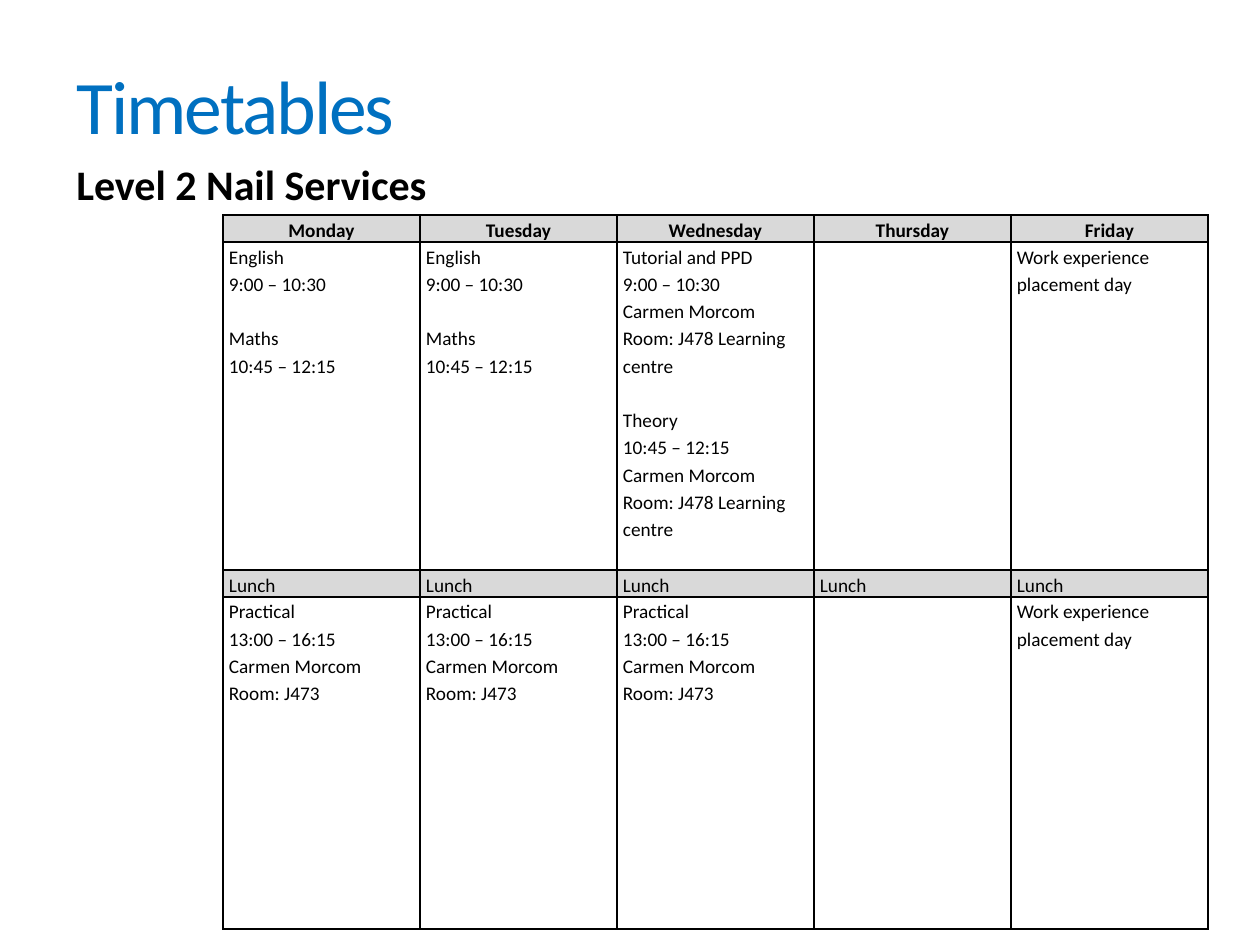
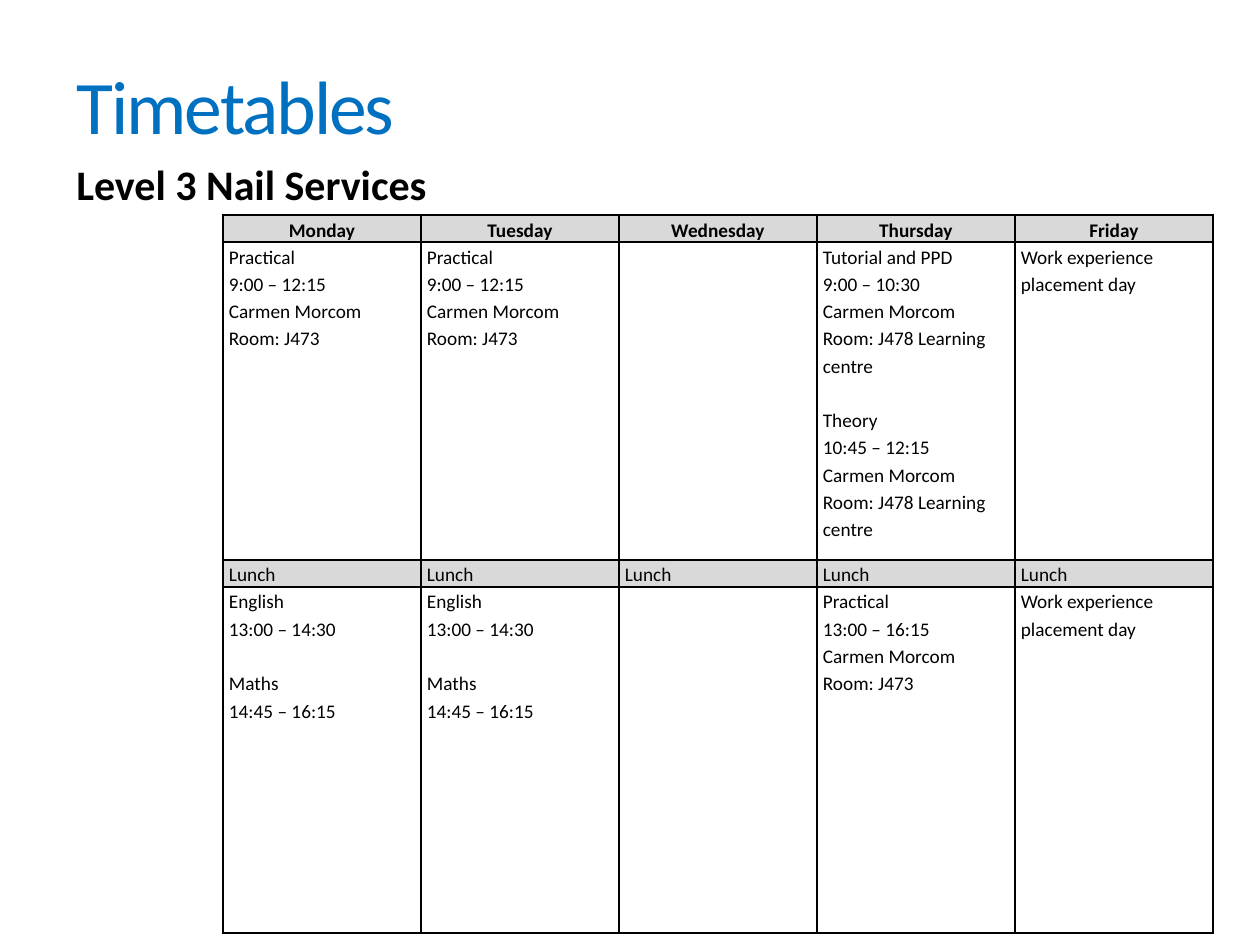
from dataclasses import dataclass

from lxml.etree import SubElement
from pptx import Presentation
from pptx.dml.color import RGBColor
from pptx.enum.text import MSO_ANCHOR, MSO_AUTO_SIZE, PP_ALIGN
from pptx.oxml.ns import qn
from pptx.util import Emu, Pt

BLUE = RGBColor(0x00, 0x70, 0xC0)
BLACK = RGBColor(0x00, 0x00, 0x00)
GREY = RGBColor(0xD9, 0xD9, 0xD9)
FONT = "Calibri"
SCALE = 914400 / 126

Blocks = tuple[str, ...]

DAYS = ("Monday", "Tuesday", "Wednesday", "Thursday", "Friday")
TUTOR = "Carmen Morcom"
CENTRE = f"{TUTOR}\nRoom: J478 Learning centre"
SALON = f"{TUTOR}\nRoom: J473"

FREE: Blocks = ()
WORK: Blocks = ("Work experience placement day",)
THEORY: Blocks = (
    f"Tutorial and PPD\n9:00 – 10:30\n{CENTRE}",
    f"Theory\n10:45 – 12:15\n{CENTRE}",
)
EARLY: Blocks = (f"Practical\n9:00 – 12:15\n{SALON}",)
LATE: Blocks = (f"Practical\n13:00 – 16:15\n{SALON}",)
SKILLS_AM: Blocks = ("English\n9:00 – 10:30", "Maths\n10:45 – 12:15")
SKILLS_PM: Blocks = ("English\n13:00 – 14:30", "Maths\n14:45 – 16:15")


@dataclass(frozen=True)
class Level:
    name: str
    width: int
    heights: tuple[int, ...]
    morning: tuple[Blocks, ...]
    later: tuple[Blocks, ...]


LEVELS = (
    Level(
        "Level 2 Nail Services", 197, (27, 328, 27, 332),
        (SKILLS_AM, SKILLS_AM, THEORY, FREE, WORK),
        (LATE, LATE, LATE, FREE, WORK),
    ),
    Level(
        "Level 3 Nail Services", 198, (27, 318, 27, 346),
        (EARLY, EARLY, FREE, THEORY, WORK),
        (SKILLS_PM, SKILLS_PM, FREE, LATE, WORK),
    ),
)


def px(size: int) -> Emu:
    return Emu(round(size * SCALE))


def style(para, size: float, color: RGBColor, bold: bool = False) -> None:
    for run in para.runs:
        font = run.font
        font.name, font.size, font.bold = FONT, Pt(size), bold
        font.color.rgb = color


def draw_title(slide) -> None:
    title = slide.shapes.title
    title.left, title.top = px(64), px(63)
    title.width, title.height = px(1134), px(173)
    frame = title.text_frame
    frame.text = "Timetables"
    frame.auto_size = MSO_AUTO_SIZE.NONE
    frame.vertical_anchor = MSO_ANCHOR.TOP
    para = frame.paragraphs[0]
    para.alignment = PP_ALIGN.LEFT
    para.line_spacing = 0.9
    style(para, 43.2, BLUE)
    para.runs[0]._r.get_or_add_rPr().set("spc", "-120")


def draw_name(slide, name: str) -> None:
    frame = slide.shapes.add_textbox(px(64), px(152), px(556), px(63)).text_frame
    frame.word_wrap = True
    frame.text = name
    style(frame.paragraphs[0], 24, BLACK, True)


def add_lines(cell) -> None:
    props = cell._tc.get_or_add_tcPr()
    for side in ("lnL", "lnR", "lnT", "lnB"):
        line = SubElement(props, qn(f"a:{side}"), w=str(Pt(1)))
        fill = SubElement(line, qn("a:solidFill"))
        SubElement(fill, qn("a:srgbClr"), val=str(BLACK))


def fill_cell(cell, blocks: Blocks, head: bool, shade: bool) -> None:
    cell.margin_left = cell.margin_right = px(6)
    cell.margin_top = cell.margin_bottom = 0
    add_lines(cell)
    if shade:
        cell.fill.solid()
        cell.fill.fore_color.rgb = GREY
    else:
        cell.fill.background()
    frame = cell.text_frame
    frame.text = "\n".join(blocks)
    starts = {block.split("\n")[0] for block in blocks[1:]}
    for para in frame.paragraphs:
        para.line_spacing = 1.15
        para.alignment = PP_ALIGN.CENTER if head else PP_ALIGN.LEFT
        if para.text in starts:
            para.space_before = Pt(15.6)
        style(para, 11, BLACK, head)


def draw_table(slide, level: Level) -> None:
    lunch = (("Lunch",),) * len(DAYS)
    rows = (tuple((day,) for day in DAYS), level.morning, lunch, level.later)
    table = slide.shapes.add_table(
        len(rows), len(DAYS), px(223), px(215),
        px(level.width * len(DAYS)), px(sum(level.heights)),
    ).table
    table.horz_banding = False
    for col in table.columns:
        col.width = px(level.width)
    for r, (height, row) in enumerate(zip(level.heights, rows)):
        table.rows[r].height = px(height)
        for c, blocks in enumerate(row):
            fill_cell(table.cell(r, c), blocks, r == 0, r % 2 == 0)


def main() -> None:
    deck = Presentation()
    deck.slide_width, deck.slide_height = px(1260), px(945)
    for level in LEVELS:
        slide = deck.slides.add_slide(deck.slide_layouts[5])
        draw_title(slide)
        draw_name(slide, level.name)
        draw_table(slide, level)
    deck.save("out.pptx")


if __name__ == "__main__":
    main()
